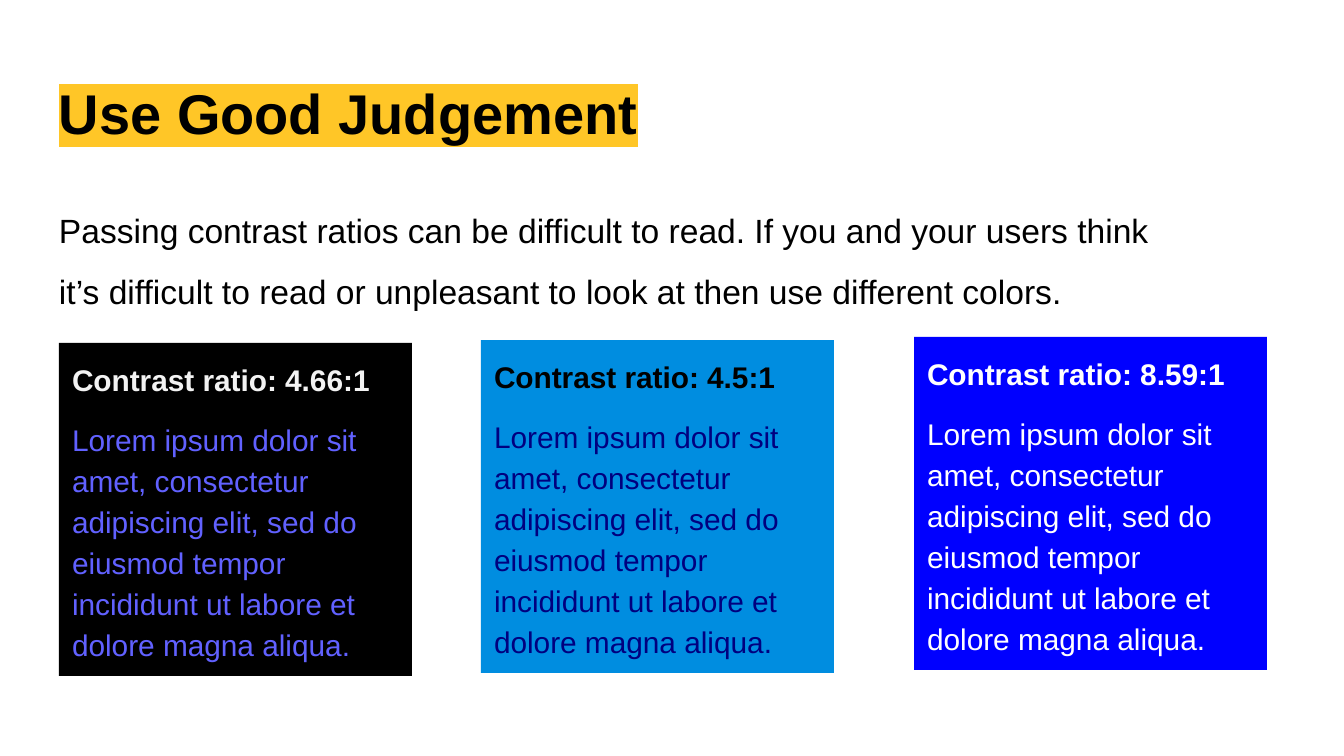
from lxml.etree import SubElement
from pptx import Presentation
from pptx.dml.color import RGBColor as RGB
from pptx.enum.shapes import MSO_SHAPE as SHAPE
from pptx.enum.text import MSO_ANCHOR as ANCHOR, PP_ALIGN as ALIGN
from pptx.oxml.ns import qn
from pptx.util import Emu, Pt

BLACK = RGB(0x00, 0x00, 0x00)
WHITE = RGB(0xFF, 0xFF, 0xFF)
PALE = RGB(0xF3, 0xF3, 0xF3)
GOLD = RGB(0xFF, 0xC6, 0x27)
BLUE = RGB(0x00, 0x00, 0xFF)
SKY = RGB(0x00, 0x8D, 0xE0)
NAVY = RGB(0x00, 0x00, 0x7F)
LILAC = RGB(0x61, 0x61, 0xFF)

TITLE = "Use Good Judgement"
INTRO = (
    "Passing contrast ratios can be difficult to read. If you and your users think "
    "it’s difficult to read or unpleasant to look at then use different colors."
)
LOREM = (
    "Lorem ipsum dolor sit amet, consectetur adipiscing elit, sed do eiusmod "
    "tempor incididunt ut labore et dolore magna aliqua."
)
CARDS = [
    (59, "4.66:1", BLACK, PALE, LILAC),
    (481, "4.5:1", SKY, BLACK, NAVY),
    (914, "8.59:1", BLUE, WHITE, WHITE),
]
TOP, RISE, WIDE, HIGH = 343, 3, 353, 333
INSET = 13


def px(n):
    return Emu(round(n * 914400 / 134.4))


def frame(shape):
    body = shape.text_frame
    body.word_wrap = True
    body.vertical_anchor = ANCHOR.TOP
    body.margin_left = body.margin_right = px(INSET)
    body.margin_top = body.margin_bottom = px(INSET)
    return body


def write(para, text, size=16, color=BLACK, bold=False, mark=None, lead=1.0, gap=0):
    para.alignment = ALIGN.LEFT
    para.line_spacing = lead
    para.space_before = Pt(gap)
    run = para.add_run()
    run.text = text
    font = run.font
    font.name, font.size, font.bold = "Arial", Pt(size), bold
    font.color.rgb = color
    if mark is not None:
        props = run._r.get_or_add_rPr()
        light = SubElement(props, qn("a:highlight"))
        SubElement(light, qn("a:srgbClr"), val=str(mark))
        props.find(qn("a:solidFill")).addnext(light)


def label(slide, box, text, **form):
    shape = slide.shapes.add_textbox(*map(px, box))
    write(frame(shape).paragraphs[0], text, **form)


def card(slide, box, ratio, fill, head, ink):
    shape = slide.shapes.add_shape(SHAPE.RECTANGLE, *map(px, box))
    shape.shadow.inherit = False
    shape.fill.solid()
    shape.fill.fore_color.rgb = fill
    shape.line.fill.background()
    body = frame(shape)
    write(body.paragraphs[0], f"Contrast ratio: {ratio}", color=head, bold=True, lead=1.15)
    write(body.add_paragraph(), LOREM, color=ink, mark=fill, lead=1.15, gap=10)


def main():
    deck = Presentation()
    deck.slide_width, deck.slide_height = px(1344), px(756)
    slide = deck.slides.add_slide(deck.slide_layouts[6])
    label(slide, (46, 66, 1253, 85), TITLE, size=30, bold=True, mark=GOLD)
    label(slide, (46, 177, 1149, 120), INTRO, size=18, lead=1.5)
    for i, (left, *look) in enumerate(CARDS):
        card(slide, (left, TOP - i * RISE, WIDE, HIGH), *look)
    deck.save("out.pptx")


if __name__ == "__main__":
    main()
